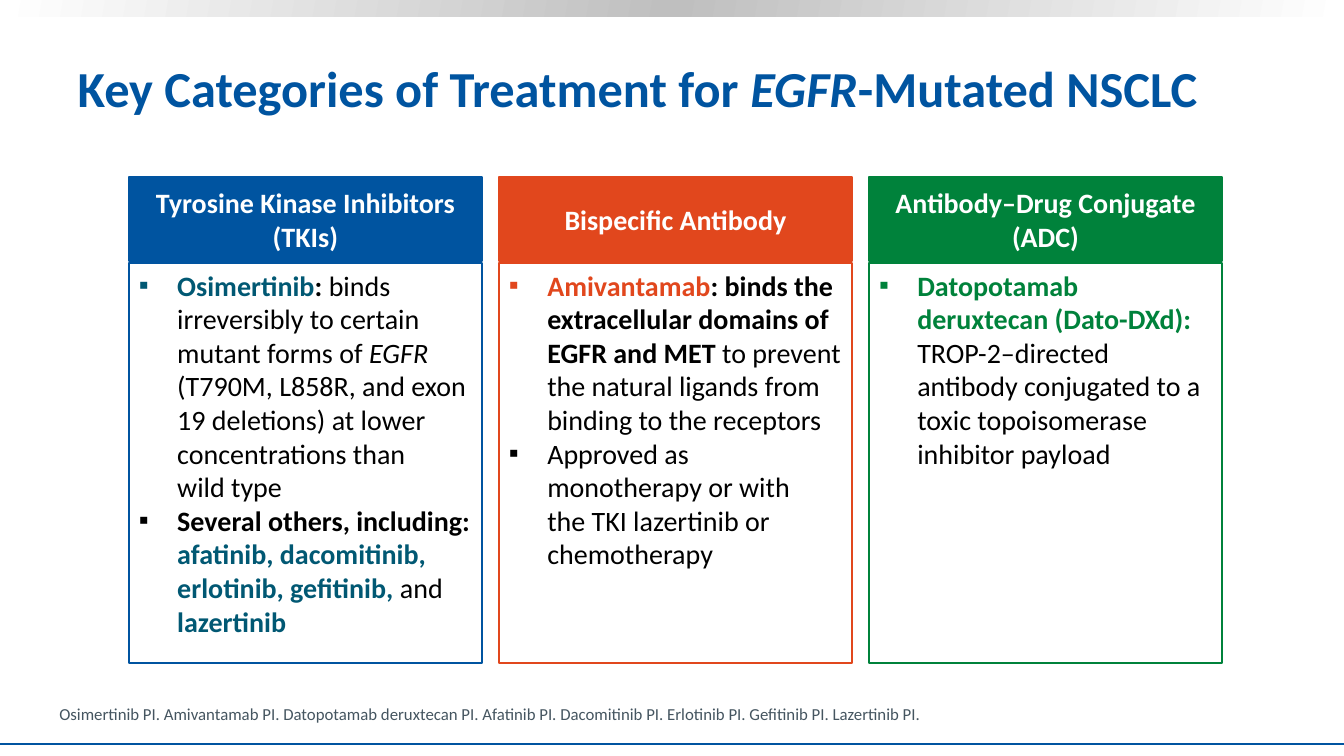
"""Build a slide on treatment categories for EGFR-mutated NSCLC."""
from copy import deepcopy
from dataclasses import dataclass

from lxml import etree
from pptx import Presentation
from pptx.dml.color import RGBColor
from pptx.enum.shapes import MSO_CONNECTOR, MSO_SHAPE
from pptx.enum.text import MSO_ANCHOR, PP_ALIGN
from pptx.oxml.ns import qn
from pptx.util import Inches, Pt

RECTANGLE = MSO_SHAPE.RECTANGLE
STRAIGHT = MSO_CONNECTOR.STRAIGHT
TOP, MIDDLE, BOTTOM = MSO_ANCHOR.TOP, MSO_ANCHOR.MIDDLE, MSO_ANCHOR.BOTTOM
LEFT, CENTER = PP_ALIGN.LEFT, PP_ALIGN.CENTER


@dataclass(frozen=True)
class Theme:
    font: str = "Calibri"
    title_size: int = 36
    body_size: int = 20
    note_size: int = 12
    line_width: float = 1.5
    blue: str = "0054A0"
    teal: str = "015873"
    orange: str = "E1471D"
    green: str = "00823B"
    gray: str = "455560"
    silver: str = "BFBFBF"
    black: str = "000000"
    white: str = "FFFFFF"


THEME = Theme()

CATEGORIES = [
    ("Tyrosine Kinase Inhibitors (TKIs)", THEME.blue, [
        [("Osimertinib", THEME.teal, "b"), (": ", THEME.black, "b"),
         ("binds irreversibly to certain mutant forms of ", THEME.black, ""),
         ("EGFR", THEME.black, "i"),
         (" (T790M, L858R, and exon 19 deletions) at lower concentrations than \nwild type",
          THEME.black, "")],
        [("Several others, including: ", THEME.black, "b"),
         ("afatinib, dacomitinib, erlotinib, gefitinib, ", THEME.teal, "b"),
         ("and", THEME.black, ""), (" lazertinib", THEME.teal, "b")],
    ]),
    ("Bispecific Antibody", THEME.orange, [
        [("Amivantamab", THEME.orange, "b"),
         (": binds the extracellular domains of EGFR and MET ", THEME.black, "b"),
         ("to prevent the natural ligands from binding to the receptors", THEME.black, "")],
        [("Approved as monotherapy or with \nthe TKI lazertinib or chemotherapy",
          THEME.black, "")],
    ]),
    ("Antibody–Drug Conjugate (ADC)", THEME.green, [
        [("Datopotamab deruxtecan (Dato-DXd): ", THEME.green, "b"),
         ("TROP-2–directed antibody conjugated to a toxic topoisomerase inhibitor payload",
          THEME.black, "")],
    ]),
]


class SlideBuilder:
    def __init__(self, slide, theme):
        self.slide = slide
        self.theme = theme

    def color(self, value):
        return RGBColor.from_string(value)

    def set_text(self, frame, paragraphs, size, anchor=TOP, align=LEFT, bullets=False):
        frame.word_wrap = True
        frame.vertical_anchor = anchor
        for index, runs in enumerate(paragraphs):
            paragraph = frame.add_paragraph() if index else frame.paragraphs[0]
            paragraph.alignment = align
            if bullets:
                self.bullet(paragraph, runs[0][1])
            paragraph.font.name = self.theme.font
            paragraph.font.size = Pt(size)
            for text, color, style in runs:
                for line_index, line in enumerate(text.split("\n")):
                    if line_index:
                        paragraph.add_line_break()
                    run = paragraph.add_run()
                    run.text = line
                    run.font.color.rgb = self.color(color)
                    run.font.bold = "b" in style
                    run.font.italic = "i" in style

    def bullet(self, paragraph, color):
        properties = paragraph._p.get_or_add_pPr()
        properties.set("marL", str(Inches(0.38)))
        properties.set("indent", str(-Inches(0.38)))
        bullet_color = etree.SubElement(properties, qn("a:buClr"))
        etree.SubElement(bullet_color, qn("a:srgbClr"), val=color)
        etree.SubElement(properties, qn("a:buFont"), typeface="Arial")
        etree.SubElement(properties, qn("a:buChar"), char="▪")

    def title(self, left, top, width, height, runs):
        shape = self.slide.shapes.title
        shape.left, shape.top = Inches(left), Inches(top)
        shape.width, shape.height = Inches(width), Inches(height)
        self.set_text(shape.text_frame, [runs], self.theme.title_size, MIDDLE)

    def note(self, left, top, width, height, text):
        box = self.slide.shapes.add_textbox(
            Inches(left), Inches(top), Inches(width), Inches(height))
        self.set_text(box.text_frame, [[(text, self.theme.gray, "")]],
                      self.theme.note_size, BOTTOM)

    def rectangle(self, left, top, width, height, line=None, fill=None):
        shape = self.slide.shapes.add_shape(
            RECTANGLE, Inches(left), Inches(top), Inches(width), Inches(height))
        shape.shadow.inherit = False
        if fill:
            shape.fill.solid()
            shape.fill.fore_color.rgb = self.color(fill)
        else:
            shape.fill.background()
        if line:
            shape.line.color.rgb = self.color(line)
            shape.line.width = Pt(self.theme.line_width)
        else:
            shape.line.fill.background()
        return shape

    def gradient_bar(self, left, top, width, height, colors):
        shape = self.rectangle(left, top, width, height)
        shape.fill.gradient()
        shape.fill.gradient_angle = 170
        stop_list = shape._element.spPr.find(f".//{qn('a:gsLst')}")
        stop_list.append(deepcopy(stop_list[-1]))
        for index, (stop, color) in enumerate(zip(shape.fill.gradient_stops, colors)):
            stop.position = index / (len(colors) - 1)
            stop.color.rgb = self.color(color)

    def rule(self, left, top, width, color):
        connector = self.slide.shapes.add_connector(
            STRAIGHT, Inches(left), Inches(top), Inches(left + width), Inches(top))
        connector.line.color.rgb = self.color(color)
        connector.line.width = Pt(self.theme.line_width)
        etree.SubElement(connector._element.spPr, qn("a:effectLst"))

    def category(self, left, heading, color, points):
        size = self.theme.body_size
        body = self.rectangle(left, 2.61, 3.5, 3.97, color)
        self.set_text(body.text_frame, points, size, bullets=True)
        header = self.rectangle(left, 1.76, 3.5, 0.83, color, color)
        self.set_text(header.text_frame, [[(heading, self.theme.white, "b")]],
                      size, MIDDLE, CENTER)


def main():
    presentation = Presentation()
    presentation.slide_width = Inches(13.33)
    presentation.slide_height = Inches(7.5)
    slide = presentation.slides.add_slide(presentation.slide_layouts[5])
    builder = SlideBuilder(slide, THEME)
    builder.gradient_bar(0, 0, 13.33, 0.16, [THEME.white, THEME.silver, THEME.white])
    builder.rule(0, 7.38, 13.33, THEME.blue)
    builder.note(0.49, 6.93, 8.76, 0.3,
                 "Osimertinib PI. Amivantamab PI. Datopotamab deruxtecan PI. Afatinib PI. "
                 "Dacomitinib PI. Erlotinib PI. Gefitinib PI. Lazertinib PI.")
    builder.title(0.67, 0.26, 11.89, 1.21, [
        ("Key Categories of Treatment for ", THEME.blue, "b"),
        ("EGFR", THEME.blue, "bi"),
        ("-Mutated NSCLC", THEME.blue, "b"),
    ])
    for index, (heading, color, points) in enumerate(CATEGORIES):
        builder.category(1.28 + 3.67 * index, heading, color, points)
    presentation.save("out.pptx")


if __name__ == "__main__":
    main()
